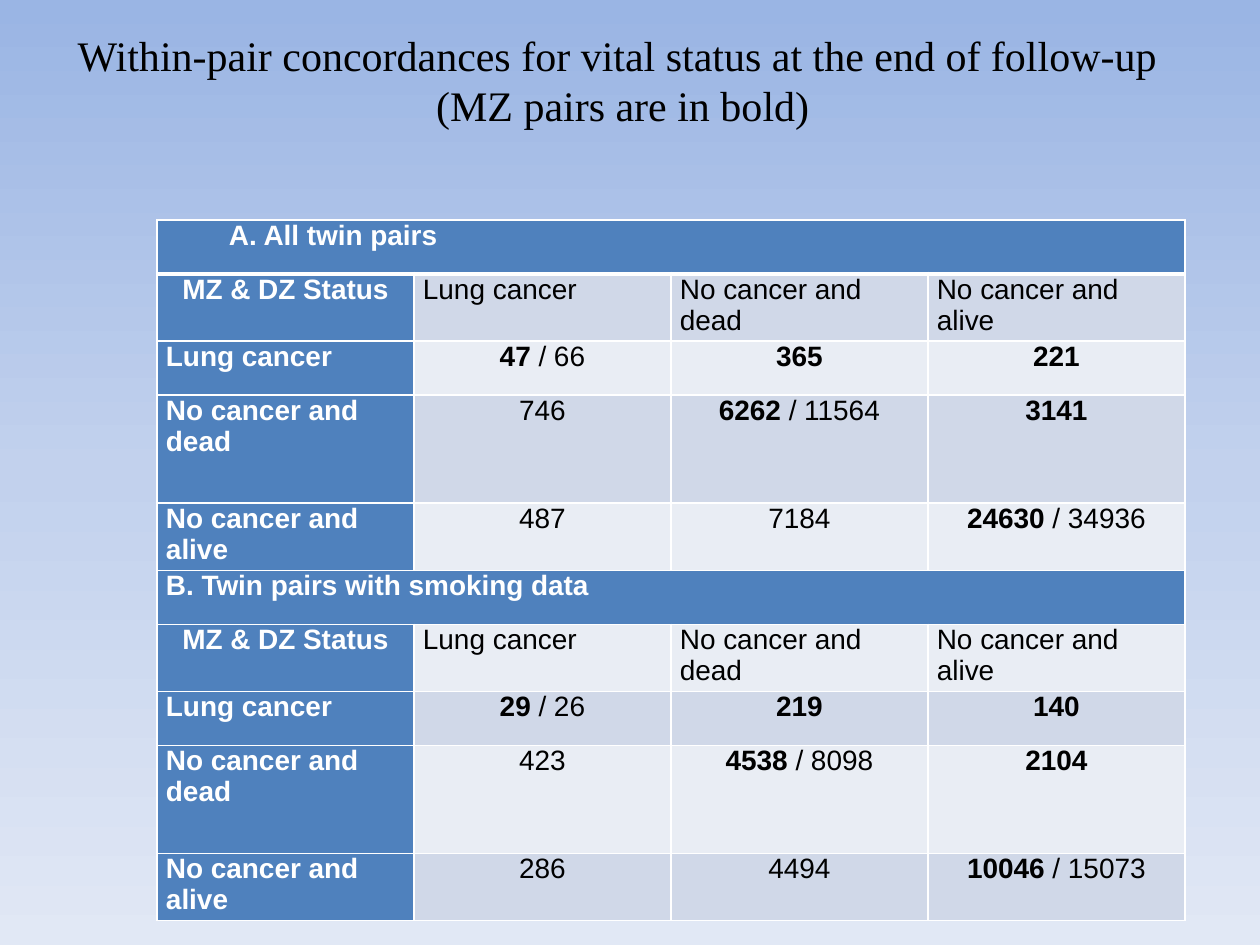
from dataclasses import dataclass

from lxml import etree
from pptx import Presentation
from pptx import util as u
from pptx.dml.color import RGBColor
from pptx.enum import text
from pptx.oxml.ns import qn

COLORS = {
    "black": "000000", "white": "FFFFFF", "header": "4F81BD",
    "band_dark": "D0D8E8", "band_light": "E9EDF4",
    "sky_top": "9AB5E4", "sky_mid": "C2D1ED", "sky_low": "E1E8F5",
}
SKY = {0: "sky_top", 50000: "sky_mid", 100000: "sky_low"}
STATUSES = ["Lung cancer", "No cancer and dead", "No cancer and alive"]
COL_W, ROW_H = 257, 54
ROW_UNITS = [1, 1, 1, 2, 1]
LEFT, CENTER = text.PP_ALIGN.LEFT, text.PP_ALIGN.CENTER


@dataclass
class Panel:
    title: str
    indent: int
    counts: list[list[str]]


PANELS = [
    Panel("A. All twin pairs", 63, [
        ["47 / 66", "365", "221"],
        ["746", "6262 / 11564", "3141"],
        ["487", "7184", "24630 / 34936"]]),
    Panel("B. Twin pairs with smoking data", 0, [
        ["29 / 26", "219", "140"],
        ["423", "4538 / 8098", "2104"],
        ["286", "4494", "10046 / 15073"]]),
]


def px(n: int) -> u.Emu:
    return u.Emu(round(n * 914400 / 126))


def rgb(name: str) -> RGBColor:
    return RGBColor.from_string(COLORS[name])


def set_all(obj, **values) -> None:
    for name, value in values.items():
        setattr(obj, name, value)


def add_run(p, words: str, color: str, font: str = "Arial", size: int = 16, bold: bool = False) -> None:
    r = p.add_run()
    r.text = words
    set_all(r.font, name=font, size=u.Pt(size), bold=bold)
    r.font.color.rgb = rgb(color)


def add_border(cell, side: str, points: int) -> None:
    ln = etree.SubElement(cell._tc.get_or_add_tcPr(), qn(f"a:ln{side}"), w=str(u.Pt(points)))
    fill = etree.SubElement(ln, qn("a:solidFill"))
    etree.SubElement(fill, qn("a:srgbClr"), val=COLORS["white"])


def fill_cell(cell, color: str, runs: list[tuple[str, bool]], ink: str, align, indent: int = 0) -> None:
    set_all(cell, margin_left=px(9), margin_right=px(9), margin_top=0, margin_bottom=0)
    cell.fill.solid()
    cell.fill.fore_color.rgb = rgb(color)
    p = cell.text_frame.paragraphs[0]
    p.alignment = align
    if indent:
        p._p.get_or_add_pPr().set("marL", str(px(indent)))
    for words, bold in runs:
        add_run(p, words, ink, bold=bold)


def count_runs(value: str, row: int, col: int) -> list[tuple[str, bool]]:
    """MZ counts (bold) lead on the diagonal and fill the cells above it."""
    if row == col:
        mz, dz = value.split(" / ")
        return [(mz, True), (f" / {dz}", False)]
    return [(value, col > row)]


def draw_panel(tbl, panel: Panel, top: int) -> None:
    tbl.cell(top, 0).merge(tbl.cell(top, 3))
    fill_cell(tbl.cell(top, 0), "header", [(panel.title, True)], "white", LEFT, panel.indent)
    for i, label in enumerate(["MZ & DZ Status"] + STATUSES):
        row = top + 1 + i
        band = "band_dark" if row % 2 else "band_light"
        fill_cell(tbl.cell(row, 0), "header", [(label, True)], "white", LEFT if i else CENTER)
        for j, status in enumerate(STATUSES):
            runs = count_runs(panel.counts[i - 1][j], i - 1, j) if i else [(status, False)]
            fill_cell(tbl.cell(row, j + 1), band, runs, "black", CENTER if i else LEFT)


def draw_background(s) -> None:
    s.background.fill.gradient()
    grad = s._element.find(".//" + qn("a:gradFill"))
    stops = grad.find(qn("a:gsLst"))
    for old in list(stops):
        stops.remove(old)
    for pos, name in SKY.items():
        gs = etree.SubElement(stops, qn("a:gs"), pos=str(pos))
        etree.SubElement(gs, qn("a:srgbClr"), val=COLORS[name])
    grad.find(qn("a:lin")).set("ang", "5400000")


def draw_title(s) -> None:
    tf = s.shapes.add_textbox(px(31), px(36), px(1173), px(131)).text_frame
    set_all(tf, word_wrap=True, vertical_anchor=text.MSO_ANCHOR.MIDDLE,
            margin_top=0, margin_bottom=px(44))
    p = tf.paragraphs[0]
    set_all(p, alignment=CENTER, line_spacing=u.Pt(29))
    add_run(p, "Within-pair concordances for vital status at the end of follow-up",
            "black", "Times New Roman", 24)
    p.add_line_break()
    add_run(p, " (MZ pairs are in bold)", "black", "Times New Roman", 24)


def draw_table(s) -> None:
    units = ROW_UNITS * len(PANELS)
    tbl = s.shapes.add_table(len(units), 4, px(157), px(220),
                             px(4 * COL_W), px(sum(units) * ROW_H)).table
    set_all(tbl, first_row=False, horz_banding=False)
    for col in tbl.columns:
        col.width = px(COL_W)
    for i, row in enumerate(tbl.rows):
        row.height = px(units[i] * ROW_H)
        for cell in row.cells:
            # The rule under the first heading is thicker
            widths = {"L": 1, "R": 1, "T": 3 if i == 1 else 1, "B": 3 if i == 0 else 1}
            for side, points in widths.items():
                add_border(cell, side, points)
    for i, panel in enumerate(PANELS):
        draw_panel(tbl, panel, i * len(ROW_UNITS))


def main() -> None:
    prs = Presentation()
    set_all(prs, slide_width=px(1260), slide_height=px(945))
    s = prs.slides.add_slide(prs.slide_layouts[6])
    draw_background(s)
    draw_title(s)
    draw_table(s)
    prs.save("out.pptx")


if __name__ == "__main__":
    main()
